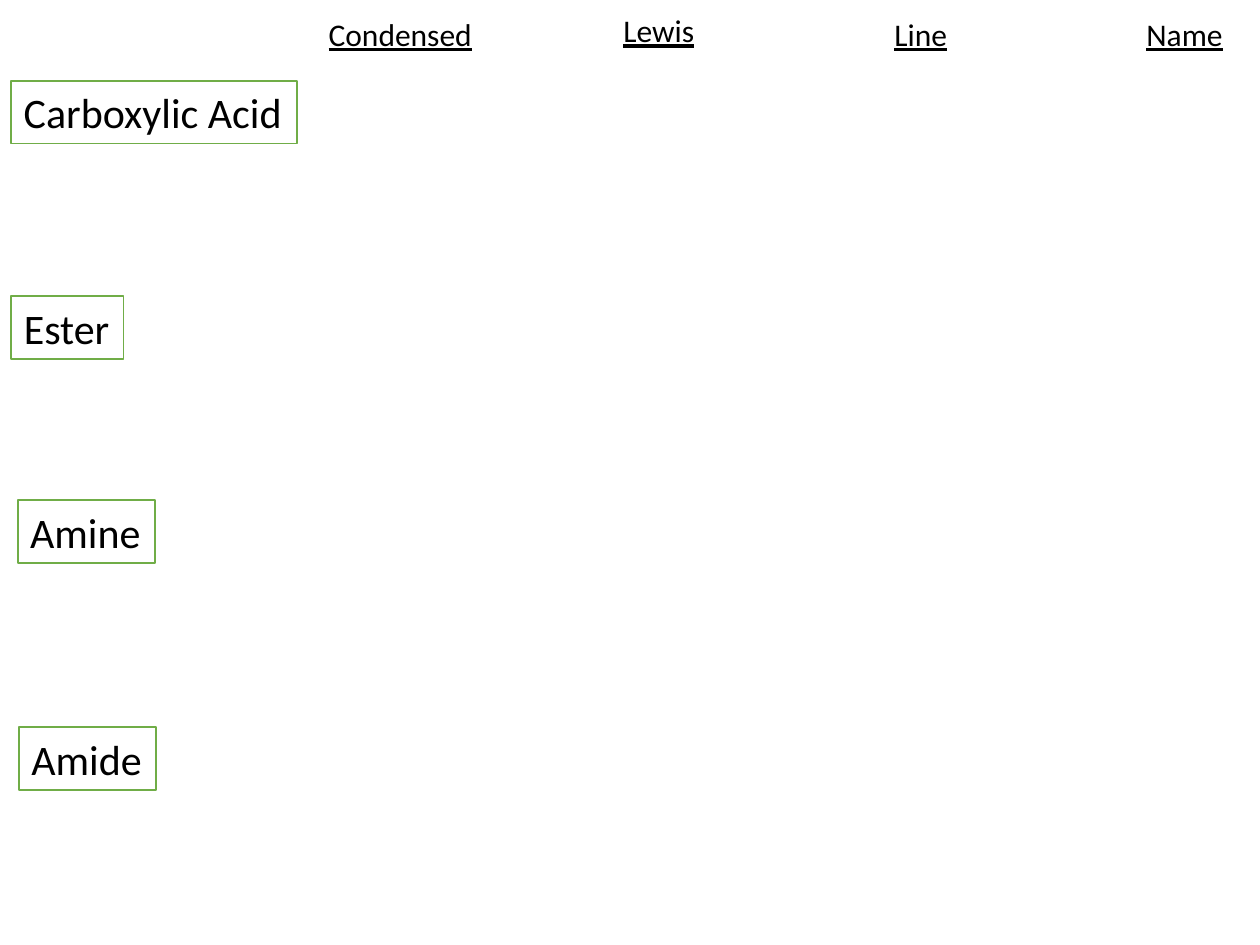
import collections

import pptx
import pptx.dml.color
import pptx.enum.shapes
import pptx.enum.text
import pptx.util

BLACK = pptx.dml.color.RGBColor(0x00, 0x00, 0x00)
WHITE = pptx.dml.color.RGBColor(0xFF, 0xFF, 0xFF)
GREEN = pptx.dml.color.RGBColor(0x70, 0xAD, 0x47)

Box = collections.namedtuple("Box", "left top width height")

FORMULA_TYPES = [
    ("Condensed", 0.13, 14, 18),
    ("Lewis", 31.33, 8, 10.27),
    ("Line", 60, 14, 8.4),
    ("Name", 86.67, 14, 10.8),
]
FUNCTIONAL_GROUPS = [
    ("Carboxylic Acid", 3.6, 2, 90.8),
    ("Ester", 3.6, 26.43, 35.6),
    ("Amine", 5.6, 49.57, 43.6),
    ("Amide", 6, 75.29, 43.6),
]


def share(box, left, top, width, height):
    return Box(
        round(box.left + box.width * left / 100),
        round(box.top + box.height * top / 100),
        round(box.width * width / 100),
        round(box.height * height / 100),
    )


def write_label(shape, text, size, underline=False):
    frame = shape.text_frame
    frame.text = text
    frame.word_wrap = False
    frame.auto_size = pptx.enum.text.MSO_AUTO_SIZE.SHAPE_TO_FIT_TEXT
    frame.vertical_anchor = pptx.enum.text.MSO_ANCHOR.TOP
    para = frame.paragraphs[0]
    para.alignment = pptx.enum.text.PP_ALIGN.LEFT
    font = para.runs[0].font
    font.name = "Calibri"
    font.size = pptx.util.Pt(size)
    font.color.rgb = BLACK
    if underline:
        font.underline = True


def add_column_headings(slide, box):
    for text, left, top, width in FORMULA_TYPES:
        heading = slide.shapes.add_textbox(*share(box, left, top, width, 80))
        write_label(heading, text, 18, underline=True)


def add_group_labels(slide, box):
    for text, left, top, width in FUNCTIONAL_GROUPS:
        label = slide.shapes.add_shape(
            pptx.enum.shapes.MSO_SHAPE.RECTANGLE,
            *share(box, left, top, width, 7.14),
        )
        label.shadow.inherit = False
        label.fill.solid()
        label.fill.fore_color.rgb = WHITE
        label.line.color.rgb = GREEN
        label.line.width = pptx.util.Pt(1)
        write_label(label, text, 24)


def main():
    deck = pptx.Presentation()
    deck.slide_width = pptx.util.Inches(10)
    deck.slide_height = pptx.util.Inches(7.5)
    slide = deck.slides.add_slide(deck.slide_layouts[6])
    page = Box(0, 0, deck.slide_width, deck.slide_height)
    add_group_labels(slide, share(page, 0, 6.67, 25, 93.33))
    add_column_headings(slide, share(page, 25, 0, 75, 6.67))
    deck.save("out.pptx")


if __name__ == "__main__":
    main()
